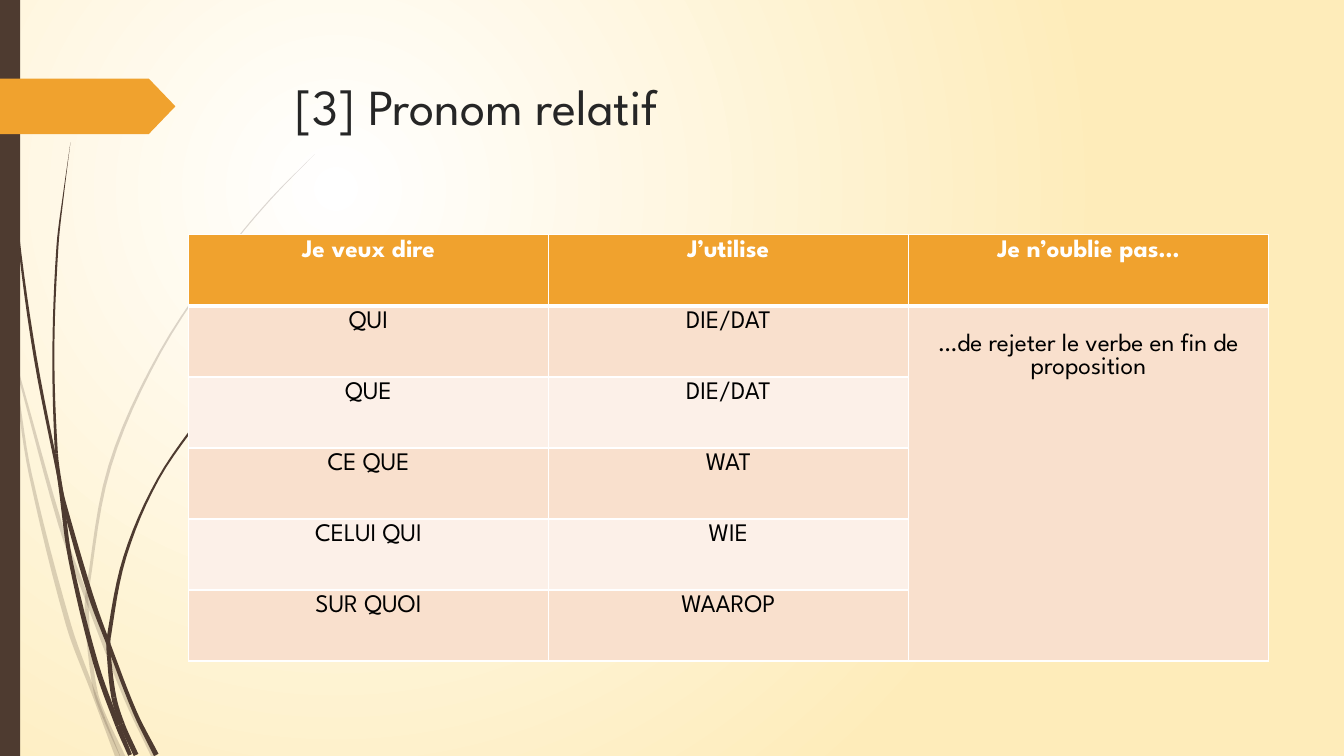
import math

from lxml import etree
from pptx import Presentation
from pptx import util as u
from pptx.dml.color import RGBColor
from pptx.enum import shapes, text
from pptx.oxml import parse_xml
from pptx.oxml.ns import nsdecls, qn

BROWN, ORANGE, WHITE = "4E3B30", "F0A22E", "FFFFFF"
BANDS = ("F9E0CD", "FCF0E8")
FONT = "League Spartan"
STEPS = 6
HEADERS = ("Je veux dire", "J’utilise", "Je n’oublie pas…")
PRONOUNS = (("QUI", "DIE/DAT"), ("QUE", "DIE/DAT"), ("CE QUE", "WAT"),
            ("CELUI QUI", "WIE"), ("SUR QUOI", "WAAROP"))
REMINDER = "…de rejeter le verbe en fin de proposition"

PALE_STEMS = (
    (((0, 2.9, .03), (.1, 3.46, .02), (.16, 3.63, .02), (.6, 5.21, .04),
      (.86, 5.93, .04), (1.25, 6.93, .04), (1.53, 7.51, .05)), (1, 4)),
    (((.11, 3.5, 0), (.17, 3.88, .02), (.3, 4.7, .03), (.68, 6.2, .05),
      (.93, 6.88, .04), (1.02, 7.12, .04), (1.17, 7.51, .05)), (5,)),
    (((3.12, 1.53, 0), (2.68, 1.98, .01), (2.29, 2.45, .01), (1.59, 3.49, .02),
      (1.09, 4.62, .03), (.87, 5.84, .03), (.86, 6.05, .04), (.89, 6.46, .04),
      (.95, 6.87, .04), (1.04, 7.12, .04), (1.22, 7.51, .05)), (5, 6, 8, 9)),
)
DARK_STEMS = (
    (((.04, 0, .01), (.05, .48, .01), (.08, 1.1, .01), (.18, 2.33, .02),
      (.35, 3.55, .03), (.59, 4.77, .03), (.64, 5.01, .04), (.9, 5.91, .05),
      (1.08, 6.4, .04), (1.34, 7.07, .04), (1.55, 7.49, .05)), (5, 8)),
    (((.7, 1.41, 0), (.63, 1.93, .01), (.57, 2.45, .02), (.53, 3.49, .02),
      (.56, 4.5, .03), (.61, 4.9, .04), (.7, 5.56, .04), (.95, 6.58, .05),
      (1.17, 7.2, .05), (1.29, 7.49, .04)), (4, 5, 8)),
    (((2.61, 3.44, 0), (2.31, 3.74, .01), (2.05, 4.06, .02), (1.57, 4.75, .02),
      (1.24, 5.52, .03), (1.08, 6.32, .04), (1.08, 6.5, .04), (1.13, 6.92, .05),
      (1.21, 7.18, .05), (1.35, 7.49, .05)), (5, 6, 7, 8)),
)


def color(value):
    """Turn a hex string into a colour."""
    return RGBColor.from_string(value)


def set_values(target, values):
    """Set the attributes named in a dict."""
    for name, value in values.items():
        setattr(target, name, value)


def paint(shape, fill, opacity=100):
    """Give a shape a flat fill without line or shadow."""
    shape.shadow.inherit = False
    shape.line.fill.background()
    shape.fill.solid()
    shape.fill.fore_color.rgb = color(fill)
    if opacity < 100:
        fill_color = shape.fill._xPr.find(".//" + qn("a:srgbClr"))
        etree.SubElement(fill_color, qn("a:alpha"), val=str(opacity * 1000))


def write(frame, words, size, ink, alignment, bold=False):
    """Put one formatted paragraph in a text frame."""
    paragraph = frame.paragraphs[0]
    paragraph.alignment = alignment
    run = paragraph.add_run()
    run.text = words
    set_values(run.font, {"name": FONT, "size": u.Pt(size), "bold": bold})
    run.font.color.rgb = color(ink)


def neighbours(points, index):
    """Return the points before and after an index, kept inside the list."""
    return points[max(index - 1, 0)], points[min(index + 1, len(points) - 1)]


def slopes(knots, index):
    """Return the change of each knot value per unit of height."""
    before, after = neighbours(knots, index)
    return [(b - a) / (after[1] - before[1]) for a, b in zip(before, after)]


def smooth(knots):
    """Interpolate knots with cubic curves along the height."""
    curve = []
    for index, (start, end) in enumerate(zip(knots, knots[1:])):
        height = end[1] - start[1]
        ends = list(zip(start, end, slopes(knots, index), slopes(knots, index + 1)))
        for step in range(STEPS):
            t = step / STEPS
            blend = t * t * (3 - 2 * t)
            curve.append(tuple(
                a + (b - a) * blend
                + height * t * (1 - t) * (m * (1 - t) - n * t)
                for a, b, m, n in ends))
    return curve + [knots[-1]]


def add_stem(slide, knots, cuts, opacity):
    """Draw a tapered grass stem through (x, y, width) knots, cut at some knots."""
    curve = smooth(knots)
    edges = []
    for index, (x, y, width) in enumerate(curve):
        before, after = neighbours(curve, index)
        dx, dy = after[0] - before[0], after[1] - before[1]
        scale = width / 2 / math.hypot(dx, dy)
        edges.append([(u.Inches(x + side * dy * scale), u.Inches(y - side * dx * scale))
                      for side in (-1, 1)])
    limits = (0, *cuts, len(knots) - 1)
    for first, last in zip(limits, limits[1:]):
        left, right = zip(*edges[first * STEPS:last * STEPS + 1])
        outline = left + right[::-1]
        builder = slide.shapes.build_freeform(*outline[0])
        builder.add_line_segments(outline[1:], close=True)
        paint(builder.convert_to_shape(), BROWN, opacity)


def add_block(slide, kind, box, fill):
    """Add a flat preset shape."""
    shape = slide.shapes.add_shape(kind, *map(u.Inches, box))
    paint(shape, fill)
    return shape


def set_background(slide):
    """Fill the background with a circular gradient."""
    fill = slide.background.fill
    fill.gradient()
    for stop, value in zip(fill.gradient_stops, (WHITE, "FEECBA")):
        stop.color.rgb = color(value)
    gradient = slide.background._cSld.find(".//" + qn("a:gradFill"))
    gradient.replace(gradient.find(qn("a:lin")), parse_xml(
        f'<a:path {nsdecls("a")} path="circle">'
        '<a:fillToRect l="50000" t="50000" r="100000" b="100000"/></a:path>'))


def set_borders(cell, top, bottom):
    """Draw white borders around a cell, widths in points."""
    properties = cell._tc.get_or_add_tcPr()
    sides = {"lnL": 1, "lnR": 1, "lnT": top, "lnB": bottom}
    for index, (side, width) in enumerate(sides.items()):
        properties.insert(index, parse_xml(
            f'<a:{side} {nsdecls("a")} w="{u.Pt(width)}"><a:solidFill>'
            f'<a:srgbClr val="{WHITE}"/></a:solidFill></a:{side}>'))


def add_pronoun_table(slide):
    """Add the table of relative pronouns."""
    rows = (HEADERS, *PRONOUNS)
    box = map(u.Inches, (1.87, 2.33, 10.71, 4.23))
    table = slide.shapes.add_table(len(rows), len(HEADERS), *box).table
    for row, words in enumerate(rows):
        header = row == 0
        for column in range(len(HEADERS)):
            cell = table.cell(row, column)
            cell.fill.solid()
            cell.fill.fore_color.rgb = color(ORANGE if header else BANDS[(row - 1) % 2])
            set_borders(cell, 3 if row == 1 else 1, 3 if header else 1)
            if column < len(words):
                write(cell.text_frame, words[column], 18, WHITE if header else "000000",
                      text.PP_ALIGN.CENTER, header)
    reminder = table.cell(1, 2)
    reminder.merge(table.cell(len(PRONOUNS), 2))
    reminder.margin_top = u.Inches(.28)
    write(reminder.text_frame, REMINDER, 18, "000000", text.PP_ALIGN.CENTER)


def add_title(slide, words):
    """Place and format the title placeholder."""
    title = slide.shapes.title
    set_values(title, {"left": u.Inches(2.83), "top": u.Inches(.69),
                       "width": u.Inches(9.75), "height": u.Inches(1.4)})
    set_values(title.text_frame, {"vertical_anchor": text.MSO_ANCHOR.TOP,
                                  "word_wrap": True})
    write(title.text_frame, words, 36, "262626", text.PP_ALIGN.LEFT)


def main():
    """Build and save the slide."""
    presentation = Presentation()
    set_values(presentation, {"slide_width": u.Inches(13.33),
                              "slide_height": u.Inches(7.5)})
    slide = presentation.slides.add_slide(presentation.slide_layouts[5])
    set_background(slide)
    for stems, opacity in ((PALE_STEMS, 20), (DARK_STEMS, 100)):
        for knots, cuts in stems:
            add_stem(slide, knots, cuts, opacity)
    add_block(slide, shapes.MSO_SHAPE.RECTANGLE, (0, 0, .2, 7.5), BROWN)
    arrow = add_block(slide, shapes.MSO_SHAPE.PENTAGON, (0, .78, 1.74, .55), ORANGE)
    arrow.adjustments[0] = .48
    add_title(slide, "[3] Pronom relatif")
    add_pronoun_table(slide)
    presentation.save("out.pptx")


if __name__ == "__main__":
    main()
